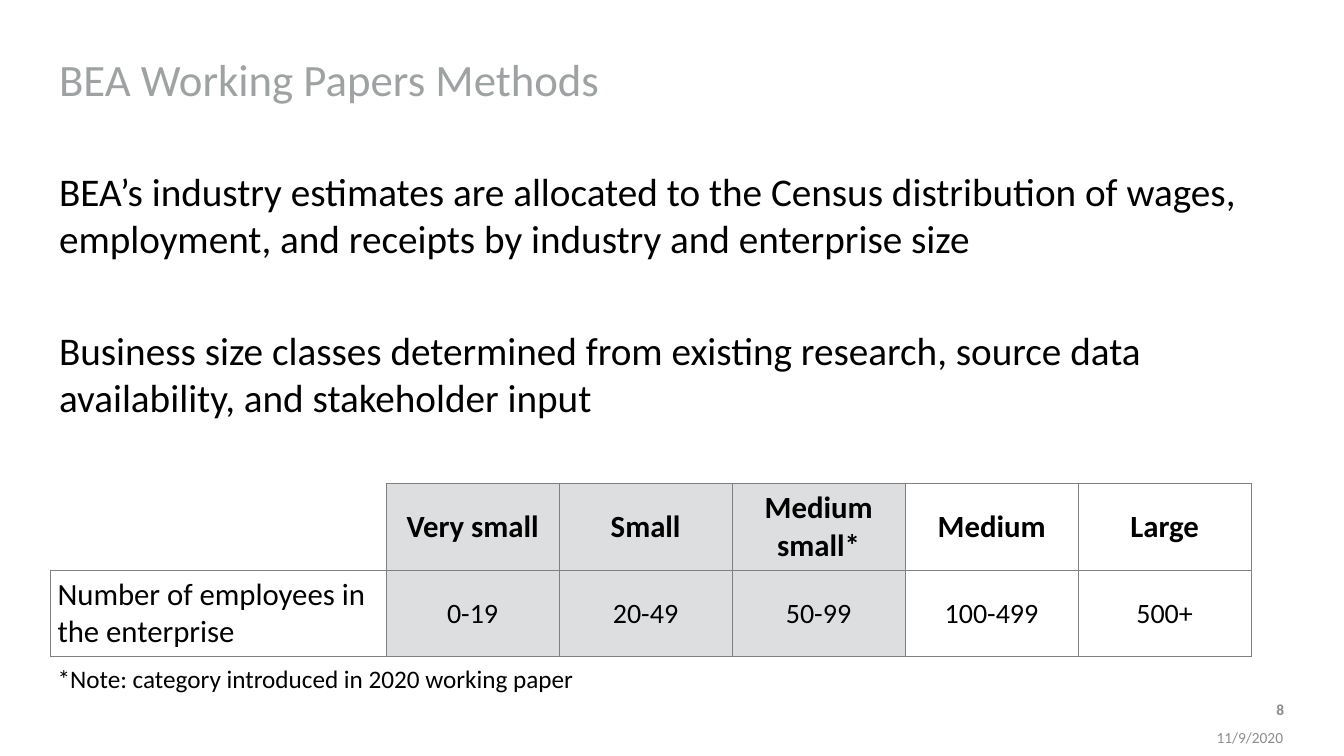
from dataclasses import dataclass

from lxml import etree
from pptx import Presentation
from pptx.dml.color import RGBColor
from pptx.enum.text import MSO_ANCHOR, PP_ALIGN
from pptx.oxml.ns import qn
from pptx.util import Cm, Pt

LEFT, CENTER, RIGHT = PP_ALIGN.LEFT, PP_ALIGN.CENTER, PP_ALIGN.RIGHT
TOP, MIDDLE = MSO_ANCHOR.TOP, MSO_ANCHOR.MIDDLE
TITLE_ONLY = 5


@dataclass(frozen=True)
class Theme:
    """Hold the colours and type sizes of the slide."""
    font: str = "Calibri"
    title: str = "9EA2A2"
    text: str = "000000"
    footer: str = "8C8C8C"
    border: str = "808080"
    shaded: str = "DCDEDF"
    plain: str = "FFFFFF"
    title_size: int = 32
    body_size: int = 28
    header_size: int = 22
    value_size: int = 20
    note_size: int = 18
    footer_size: int = 11


THEME = Theme()

BODY = (
    "BEA’s industry estimates are allocated to the Census distribution of wages, "
    "employment, and receipts by industry and enterprise size",
    "Business size classes determined from existing research, source data "
    "availability, and stakeholder input",
)
SIZE_CLASSES = (
    ("Very small", "0-19", THEME.shaded),
    ("Small", "20-49", THEME.shaded),
    ("Medium small*", "50-99", THEME.shaded),
    ("Medium", "100-499", THEME.plain),
    ("Large", "500+", THEME.plain),
)


def set_all(target, values):
    """Set each attribute of the target from a dict of format values."""
    for name, value in values.items():
        setattr(target, name, value)


def write(frame, paragraphs, size, color=THEME.text, bold=False, align=LEFT, gap=0):
    """Fill a text frame with evenly formatted paragraphs."""
    for index, wording in enumerate(paragraphs):
        paragraph = frame.paragraphs[0] if index == 0 else frame.add_paragraph()
        paragraph.text = wording
        paragraph.alignment = align
        paragraph.space_before = Pt(gap if index else 0)
        font = paragraph.runs[0].font
        set_all(font, {"name": THEME.font, "size": Pt(size), "bold": bold})
        font.color.rgb = RGBColor.from_string(color)


def add_title(slide, wording):
    """Place and format the title placeholder."""
    title = slide.shapes.title
    set_all(title, {"left": Cm(1.24), "top": Cm(0.64),
                    "width": Cm(25.86), "height": Cm(2.54)})
    set_all(title.text_frame, {
        "vertical_anchor": MIDDLE, "margin_left": Cm(0.25), "margin_right": Cm(0.25),
        "margin_top": Cm(0.13), "margin_bottom": 0})
    write(title.text_frame, [wording], THEME.title_size, THEME.title)


def add_text(slide, box, paragraphs, size, anchor=MIDDLE, **style):
    """Add a wrapping text box at left, top, width and height in centimetres."""
    frame = slide.shapes.add_textbox(*map(Cm, box)).text_frame
    set_all(frame, {"word_wrap": True, "vertical_anchor": anchor})
    write(frame, paragraphs, size, **style)


def draw_borders(cell, sides):
    """Draw the named sides (L, R, T, B) of a table cell and clear the others."""
    properties = cell._tc.get_or_add_tcPr()
    for side in "LRTB":
        line = etree.SubElement(properties, qn(f"a:ln{side}"), w=str(Pt(1)))
        if side in sides:
            fill = etree.SubElement(line, qn("a:solidFill"))
            etree.SubElement(fill, qn("a:srgbClr"), val=THEME.border)
        else:
            etree.SubElement(line, qn("a:noFill"))


def format_cell(cell, sides, color=None, wording="", size=THEME.header_size, **style):
    """Set the borders, fill and text of a table cell."""
    set_all(cell, {"vertical_anchor": MIDDLE, "margin_left": Cm(0.18),
                   "margin_right": Cm(0.18), "margin_top": 0, "margin_bottom": 0})
    draw_borders(cell, sides)
    if color:
        cell.fill.solid()
        cell.fill.fore_color.rgb = RGBColor.from_string(color)
    else:
        cell.fill.background()
    if wording:
        write(cell.text_frame, [wording], size, **style)


def add_size_table(slide):
    """Add the table of business size classes with its note row."""
    count = len(SIZE_CLASSES) + 1
    table = slide.shapes.add_table(
        3, count, Cm(1.27), Cm(12.19), Cm(30.26), Cm(5.53)).table
    set_all(table, {"first_row": False, "horz_banding": False})
    for row, height in zip(table.rows, (2.18, 2.18, 1.17)):
        row.height = Cm(height)
    for index, column in enumerate(table.columns):
        column.width = Cm(4.36 if index else 8.46)

    format_cell(table.cell(0, 0), "RB", THEME.plain)
    format_cell(table.cell(1, 0), "LRTB", THEME.plain,
                "Number of employees in the enterprise")
    for index, (name, employees, color) in enumerate(SIZE_CLASSES, 1):
        format_cell(table.cell(0, index), "LRTB", color, name, bold=True, align=CENTER)
        format_cell(table.cell(1, index), "LRTB", color, employees,
                    THEME.value_size, align=CENTER)

    table.cell(2, 0).merge(table.cell(2, count - 1))
    for index in range(count):
        note = "" if index else "*Note: category introduced in 2020 working paper"
        format_cell(table.cell(2, index), "T", None, note, THEME.note_size)


def main():
    """Build the slide and save it."""
    deck = Presentation()
    set_all(deck, {"slide_width": Cm(33.87), "slide_height": Cm(19.05)})
    slide = deck.slides.add_slide(deck.slide_layouts[TITLE_ONLY])
    add_title(slide, "BEA Working Papers Methods")
    add_text(slide, (1.24, 4.08, 31.37, 7.6), BODY, THEME.body_size, TOP, gap=46.6)
    footer = {"size": THEME.footer_size, "color": THEME.footer, "align": RIGHT}
    add_text(slide, (28.93, 18.36, 3.66, 0.46), ["11/9/2020"], **footer)
    add_text(slide, (30.63, 17.6, 1.98, 0.56), ["8"], bold=True, **footer)
    add_size_table(slide)
    deck.save("out.pptx")


if __name__ == "__main__":
    main()
